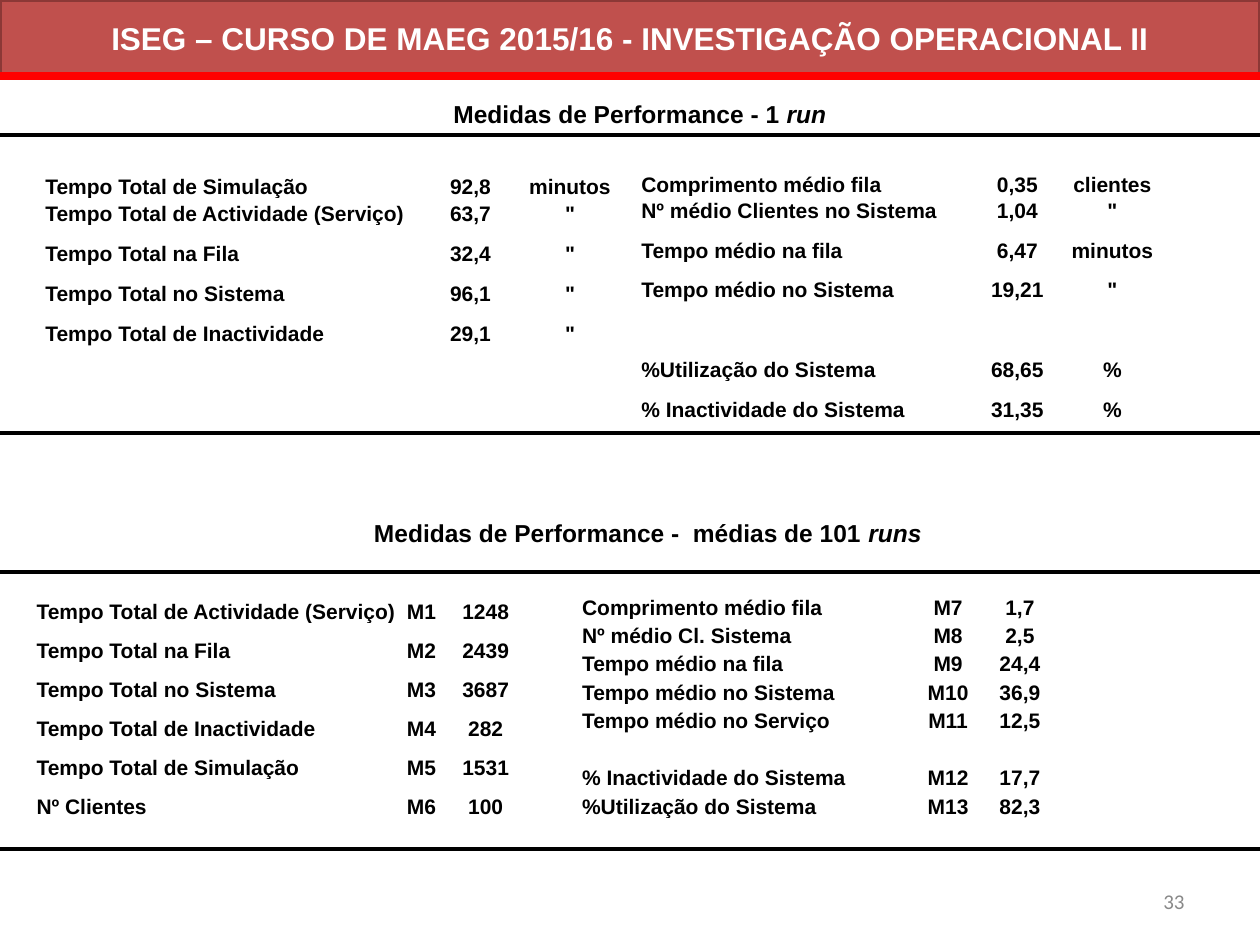
from lxml.etree import SubElement
from pptx import Presentation
from pptx.dml.color import RGBColor
from pptx.enum.shapes import MSO_CONNECTOR
from pptx.enum.text import MSO_ANCHOR, PP_ALIGN
from pptx.oxml.ns import qn
from pptx.util import Inches, Pt

BLACK = RGBColor(0x00, 0x00, 0x00)
WHITE = RGBColor(0xFF, 0xFF, 0xFF)
GRAY = RGBColor(0x89, 0x89, 0x89)
RED = RGBColor(0xFF, 0x00, 0x00)
BRICK = RGBColor(0xC0, 0x50, 0x4D)
DARK = RGBColor(0x8C, 0x38, 0x36)

# Rows are label, value, unit; an empty tuple leaves a blank row.
TOTALS = [
    (), (),
    ("Tempo Total de Simulação", "92,8", "minutos"),
    ("Tempo Total de Actividade (Serviço)", "63,7", '"'),
    ("Tempo Total na Fila", "32,4", '"'),
    ("Tempo Total no Sistema", "96,1", '"'),
    ("Tempo Total de Inactividade", "29,1", '"'),
    (),
]
MEANS = [
    ("Comprimento médio fila", "0,35", "clientes"),
    ("Nº médio Clientes no Sistema", "1,04", '"'),
    ("Tempo médio na fila", "6,47", "minutos"),
    ("Tempo médio no Sistema", "19,21", '"'),
    (),
    ("%Utilização do Sistema", "68,65", "%"),
    ("% Inactividade do Sistema", "31,35", "%"),
]
# Rows are label, measure, value.
RUN_TOTALS = [
    ("Tempo Total de Actividade (Serviço)", "M1", "1248"),
    ("Tempo Total na Fila", "M2", "2439"),
    ("Tempo Total no Sistema", "M3", "3687"),
    ("Tempo Total de Inactividade", "M4", "282"),
    ("Tempo Total de Simulação", "M5", "1531"),
    ("Nº Clientes", "M6", "100"),
]
RUN_MEANS = [
    ("Comprimento médio fila", "M7", "1,7"),
    ("Nº médio Cl. Sistema", "M8", "2,5"),
    ("Tempo médio na fila", "M9", "24,4"),
    ("Tempo médio no Sistema", "M10", "36,9"),
    ("Tempo médio no Serviço", "M11", "12,5"),
    (),
    ("% Inactividade do Sistema", "M12", "17,7"),
    ("%Utilização do Sistema", "M13", "82,3"),
]
# Merged cells are row, first column, last column.
TOTAL_SPANS = [(0, 2, 5), (1, 2, 4), (2, 0, 4), (3, 0, 4), (4, 0, 3),
               (5, 0, 3), (6, 0, 3), (7, 1, 2)]
MEAN_SPANS = [(0, 0, 2), (0, 3, 4), (1, 0, 4), (2, 0, 3), (3, 0, 3),
              (4, 2, 3), (5, 0, 3), (6, 0, 3)]


def add_text(para, text, size=12, font="Arial", color=BLACK, bold=True,
             italic=False, align=PP_ALIGN.LEFT):
    para.alignment = align
    run = para.add_run()
    run.text = text
    run.font.size = Pt(size)
    run.font.name = font
    run.font.bold = bold
    run.font.italic = italic
    run.font.color.rgb = color


def add_title(slide, text):
    title = slide.shapes.title
    title.left, title.top = Inches(0), Inches(0)
    title.width, title.height = Inches(10), Inches(0.6)
    title.fill.solid()
    title.fill.fore_color.rgb = BRICK
    title.line.color.rgb = DARK
    title.line.width = Pt(2)
    frame = title.text_frame
    frame.vertical_anchor = MSO_ANCHOR.MIDDLE
    add_text(frame.paragraphs[0], text, size=18, color=WHITE,
             align=PP_ALIGN.CENTER)


def add_box(slide, left, top, width, height, anchor=MSO_ANCHOR.TOP):
    """Add an empty text box and return its first paragraph."""
    box = slide.shapes.add_textbox(
        Inches(left), Inches(top), Inches(width), Inches(height))
    box.text_frame.word_wrap = True
    box.text_frame.vertical_anchor = anchor
    return box.text_frame.paragraphs[0]


def add_heading(slide, left, top, width, text, term):
    para = add_box(slide, left, top, width, 0.34)
    add_text(para, text, size=14)
    add_text(para, term, size=14, italic=True)


def add_rule(slide, top, color=BLACK, weight=2.25):
    """Draw a horizontal line across the whole slide."""
    rule = slide.shapes.add_connector(
        MSO_CONNECTOR.STRAIGHT, Inches(0), Inches(top), Inches(10), Inches(top))
    rule.line.color.rgb = color
    rule.line.width = Pt(weight)
    SubElement(rule._element.spPr, qn("a:effectLst"))


def clear_cell(cell):
    """Remove the fill, tighten the margins and keep blank text small."""
    cell.fill.background()
    cell.margin_left = cell.margin_right = cell.margin_top = Inches(0.01)
    cell.margin_bottom = Inches(0)
    cell.vertical_anchor = MSO_ANCHOR.BOTTOM
    para = cell.text_frame.paragraphs[0]
    end = SubElement(para._p, qn("a:endParaRPr"), sz="1200")
    SubElement(end, qn("a:latin"), typeface="Arial")


def add_grid(slide, left, top, widths, heights, data, spans=()):
    """Add a table with labels in the first column, values in the last two."""
    shape = slide.shapes.add_table(
        len(heights), len(widths), Inches(left), Inches(top),
        Inches(sum(widths)), Inches(sum(heights)))
    table = shape.table
    table.first_row = table.horz_banding = False
    for col, width in zip(table.columns, widths):
        col.width = Inches(width)
    for row, height in zip(table.rows, heights):
        row.height = Inches(height)
    for cell in table.iter_cells():
        clear_cell(cell)
    for row, first, end in spans:
        table.cell(row, first).merge(table.cell(row, end))
    last = len(widths) - 1
    for i, texts in enumerate(data):
        for j, text in zip((0, last - 1, last), texts):
            add_text(table.cell(i, j).text_frame.paragraphs[0], text,
                     align=PP_ALIGN.CENTER if j else PP_ALIGN.LEFT)


def main():
    prs = Presentation()
    prs.slide_width, prs.slide_height = Inches(10), Inches(7.5)
    slide = prs.slides.add_slide(prs.slide_layouts[5])

    add_title(slide, "ISEG – CURSO DE MAEG 2015/16 - INVESTIGAÇÃO OPERACIONAL II")
    add_rule(slide, 0.6, color=RED, weight=4.5)
    add_text(add_box(slide, 7.17, 6.95, 2.33, 0.4, anchor=MSO_ANCHOR.MIDDLE),
             "33", font="Calibri", color=GRAY, bold=False,
             align=PP_ALIGN.RIGHT)

    add_grid(slide, 0.35, 0.83, [0.72, 0.62, 0.1, 1.24, 0.31, 0.79, 0.79],
             [0.27] * 2 + [0.2] * 2 + [0.32] * 4, TOTALS, spans=TOTAL_SPANS)
    add_grid(slide, 5.08, 1.23, [0.67, 0.67, 0.67, 0.2, 0.45, 0.67, 0.84],
             [0.33, 0.2] + [0.315] * 5, MEANS, spans=MEAN_SPANS)
    add_heading(slide, 3.5, 0.74, 4.49, "Medidas de Performance - 1 ", "run")

    add_grid(slide, 0.28, 4.74, [2.36, 0.55, 0.31, 0.71],
             [0.21] + [0.31] * 5, RUN_TOTALS, spans=[(0, 0, 1)])
    add_grid(slide, 4.61, 4.69, [2.38, 0.25, 0.57, 0.57],
             [1.81 / 8] * 8, RUN_MEANS)
    add_heading(slide, 2.87, 4.06, 4.8,
                "Medidas de Performance -  médias de 101 ", "runs")

    for top in (1.07, 3.44, 4.54, 6.74):
        add_rule(slide, top)
    prs.save("out.pptx")


if __name__ == "__main__":
    main()
